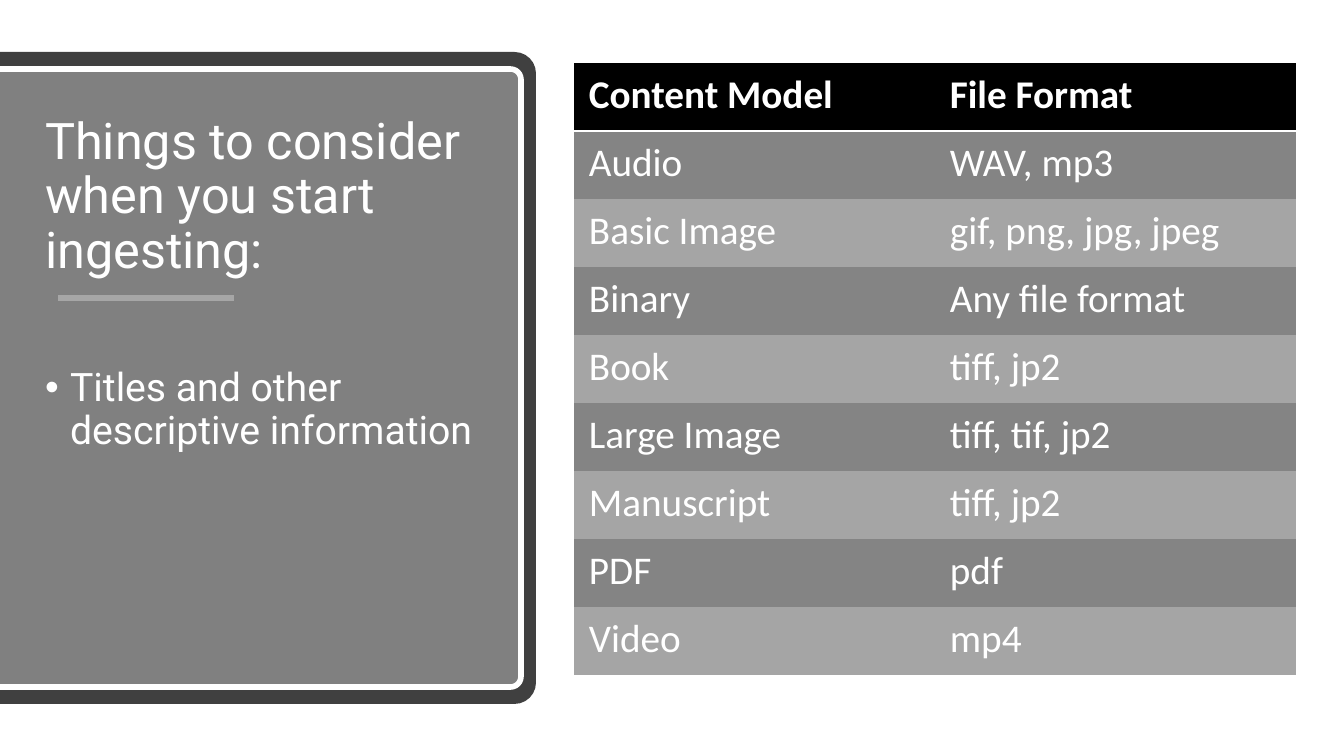
from pptx import Presentation
from pptx.dml.color import RGBColor
from pptx.enum.shapes import MSO_CONNECTOR as Link, MSO_SHAPE as Shape
from pptx.enum.text import MSO_ANCHOR as Anchor, MSO_AUTO_SIZE as Fit, PP_ALIGN as Align
from pptx.oxml import parse_xml
from pptx.oxml.ns import nsdecls, qn
from pptx.util import Emu, Pt

# Content
TITLE = "Things to consider when you start ingesting:"
POINT = "Titles and other descriptive information"
ROWS = [
    ("Content Model", "File Format"),
    ("Audio", "WAV, mp3"),
    ("Basic Image", "gif, png, jpg, jpeg"),
    ("Binary", "Any file format"),
    ("Book", "tiff, jp2"),
    ("Large Image", "tiff, tif, jp2"),
    ("Manuscript", "tiff, jp2"),
    ("PDF", "pdf"),
    ("Video", "mp4"),
]
WHITE, HEAD, BANDS = "FFFFFF", "000000", ("A5A5A5", "848484")
# Panels as drawn: left, top, width, height, corner, fill, edge
PANELS = [
    (0, 52, 536, 652, 0.04, "404040", None),
    (-4, 69, 525, 618, 0.02, "808080", WHITE),
]
COL, ROW = 361, 68
NO_STYLE = "{2D5ABB26-0587-4C30-8999-92F81FD0307C}"


def px(n):
    return Emu(round(n * 914400 / 100.8))


def color(hue):
    return RGBColor.from_string(hue)


def place(item, *box):
    item.left, item.top, item.width, item.height = map(px, box)


def write(frame, text, size, font, bold=False, space=None):
    frame.text = text
    frame.word_wrap = True
    par = frame.paragraphs[0]
    par.alignment = Align.LEFT
    par.space_before = Pt(0)
    par.line_spacing = space
    face = par.runs[0].font
    face.size, face.name, face.bold = Pt(size), font, bold
    face.color.rgb = color(WHITE)
    return par


deck = Presentation()
deck.slide_width, deck.slide_height = px(1344), px(756)
slide = deck.slides.add_slide(deck.slide_layouts[1])
shapes = slide.shapes
title, body = slide.placeholders

# Panels, turned so the rounded end points right
for left, top, wide, high, curve, fill, edge in PANELS:
    x, y = left + (wide - high) / 2, top + (high - wide) / 2
    panel = shapes.add_shape(Shape.ROUND_2_SAME_RECTANGLE,
                             px(x), px(y), px(high), px(wide))
    panel.rotation = 90
    panel.adjustments[0] = curve
    panel.shadow.inherit = False
    panel.fill.solid()
    panel.fill.fore_color.rgb = color(fill)
    if edge:
        panel.line.color.rgb = color(edge)
        panel.line.width = Pt(4)
    else:
        panel.line.fill.background()

# Rule under the title
rule = shapes.add_connector(Link.STRAIGHT, px(58), px(298), px(234), px(298))
rule.line.color.rgb = color("A6A6A6")
rule.line.width = Pt(4)
rule.element.spPr.append(parse_xml(f"<a:effectLst {nsdecls('a')}/>"))

# Title and bullet, in front of the panels
place(title, 35, 108, 452, 179)
place(body, 35, 313, 452, 335)
write(title.text_frame, TITLE, 36, "Roboto", space=0.9)
title.text_frame.vertical_anchor = Anchor.MIDDLE
point = write(body.text_frame, POINT, 28, "Roboto", space=0.9)
body.text_frame.margin_top = px(55)
props = point._p.get_or_add_pPr()
props.set("marL", str(px(25)))
props.set("indent", str(px(-25)))
props.append(parse_xml(f'<a:buChar {nsdecls("a")} char="•"/>'))
for item in (title, body):
    item.text_frame.auto_size = Fit.NONE
    shapes.element.append(item.element)

# Table
grid = shapes.add_table(len(ROWS), 2, px(574), px(63),
                        px(2 * COL), px(len(ROWS) * ROW)).table
grid._tbl.tblPr.find(qn("a:tableStyleId")).text = NO_STYLE
for col in grid.columns:
    col.width = px(COL)
for r, words in enumerate(ROWS):
    grid.rows[r].height = px(ROW)
    for c, word in enumerate(words):
        cell = grid.cell(r, c)
        write(cell.text_frame, word, 28, "Calibri", bold=r == 0)
        cell.margin_left = cell.margin_right = px(15)
        cell.margin_top = cell.margin_bottom = px(8)
        cell.fill.solid()
        cell.fill.fore_color.rgb = color(BANDS[r % 2] if r else HEAD)
        if r == 0:
            cell._tc.get_or_add_tcPr().insert(0, parse_xml(
                f'<a:lnB {nsdecls("a")} w="{Pt(2)}"><a:solidFill>'
                f'<a:srgbClr val="{WHITE}"/></a:solidFill></a:lnB>'))

deck.save("out.pptx")
